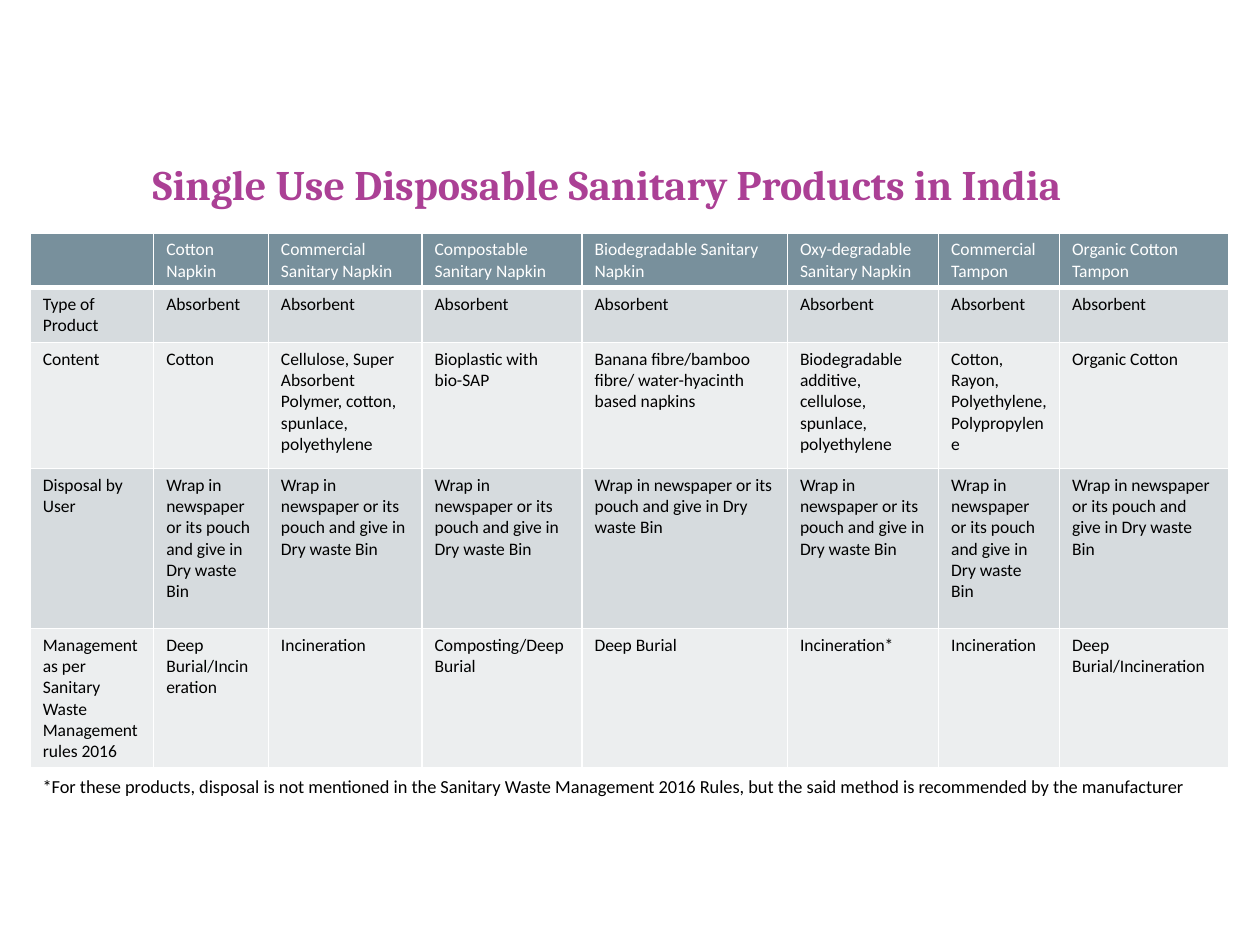
from lxml.etree import SubElement
from pptx import Presentation
from pptx.dml.color import RGBColor
from pptx.enum.text import PP_ALIGN
from pptx.oxml.ns import qn
from pptx.util import Inches, Pt

COLORS = {
    "title": "AB4095",
    "header": "78909C",
    "band_dark": "D6DBDE",
    "band_light": "ECEEEF",
    "white": "FFFFFF",
    "black": "000000",
}

TITLE_FORMAT = {"name": "Cambria", "size": Pt(24), "bold": True}
CELL_FORMAT = {"name": "Calibri", "size": Pt(10), "bold": False}
NOTE_FORMAT = {"name": "Calibri", "size": Pt(10.5), "bold": False}

COLUMN_WIDTHS = [0.98, 0.91, 1.22, 1.27, 1.63, 1.2, 0.96, 1.34]
ROW_HEIGHTS = [0.43, 0.43, 1, 1.27, 1.1]
PRODUCT_COUNT = len(COLUMN_WIDTHS) - 1

ROWS = [
    ["", "Cotton Napkin", "Commercial Sanitary Napkin", "Compostable Sanitary Napkin",
     "Biodegradable Sanitary Napkin", "Oxy-degradable Sanitary Napkin",
     "Commercial Tampon", "Organic Cotton Tampon"],
    ["Type of Product"] + ["Absorbent"] * PRODUCT_COUNT,
    ["Content", "Cotton",
     "Cellulose, Super Absorbent Polymer, cotton, spunlace, polyethylene",
     "Bioplastic with bio-SAP",
     "Banana fibre/bamboo fibre/ water-hyacinth based napkins",
     "Biodegradable additive, cellulose, spunlace, polyethylene",
     "Cotton, Rayon, Polyethylene,Polypropylene", "Organic Cotton"],
    ["Disposal by User"]
    + ["Wrap in newspaper or its pouch and give in Dry waste Bin"] * PRODUCT_COUNT,
    ["Management as per Sanitary Waste Management rules 2016",
     "Deep Burial/Incineration", "Incineration", "Composting/Deep Burial",
     "Deep Burial", "Incineration*", "Incineration", "Deep Burial/Incineration"],
]


def write_text(paragraph, text, font_format, color):
    run = paragraph.add_run()
    run.text = text
    for attribute, value in font_format.items():
        setattr(run.font, attribute, value)
    run.font.color.rgb = RGBColor.from_string(COLORS[color])


def add_text(slide, box, text, font_format, color, wrap=True):
    """Add a one-paragraph text box and return its paragraph."""
    shape = slide.shapes.add_textbox(*map(Inches, box))
    shape.text_frame.word_wrap = wrap
    paragraph = shape.text_frame.paragraphs[0]
    write_text(paragraph, text, font_format, color)
    return paragraph


def add_title(slide, box):
    paragraph = add_text(slide, box, "Single Use Disposable Sanitary Products in India",
                         TITLE_FORMAT, "title", wrap=False)
    paragraph.alignment = PP_ALIGN.CENTER
    paragraph.line_spacing = Pt(33.6)


def set_borders(cell, bottom_width):
    properties = cell._tc.get_or_add_tcPr()
    widths = {"a:lnL": 1, "a:lnR": 1, "a:lnT": 1, "a:lnB": bottom_width}
    for tag, width in widths.items():
        line = SubElement(properties, qn(tag), w=str(Pt(width)))
        fill = SubElement(line, qn("a:solidFill"))
        SubElement(fill, qn("a:srgbClr"), val=COLORS["white"])


def add_product_table(slide, left, top):
    frame = slide.shapes.add_table(
        len(ROWS), len(COLUMN_WIDTHS), Inches(left), Inches(top),
        Inches(sum(COLUMN_WIDTHS)), Inches(sum(ROW_HEIGHTS)))
    table = frame.table
    table.first_row = table.horz_banding = False
    for column, width in zip(table.columns, COLUMN_WIDTHS):
        column.width = Inches(width)
    for index, (row, height, texts) in enumerate(zip(table.rows, ROW_HEIGHTS, ROWS)):
        row.height = Inches(height)
        is_header = index == 0
        band = "band_dark" if index % 2 else "band_light"
        for cell, text in zip(row.cells, texts):
            set_borders(cell, 3 if is_header else 1)
            cell.fill.solid()
            cell.fill.fore_color.rgb = RGBColor.from_string(
                COLORS["header" if is_header else band])
            write_text(cell.text_frame.paragraphs[0], text, CELL_FORMAT,
                       "white" if is_header else "black")


def add_footnote(slide, box):
    add_text(slide, box,
             "*For these products, disposal is not mentioned in the Sanitary Waste "
             "Management 2016 Rules, but the said method is recommended by the manufacturer",
             NOTE_FORMAT, "black")


def main():
    presentation = Presentation()
    presentation.slide_width = Inches(10)
    presentation.slide_height = Inches(7.5)
    slide = presentation.slides.add_slide(presentation.slide_layouts[6])
    add_title(slide, (0.99, 1.14, 7.65, 1.01))
    add_product_table(slide, 0.24, 1.85)
    add_footnote(slide, (0.24, 6.1, 9.39, 0.28))
    presentation.save("out.pptx")


if __name__ == "__main__":
    main()
